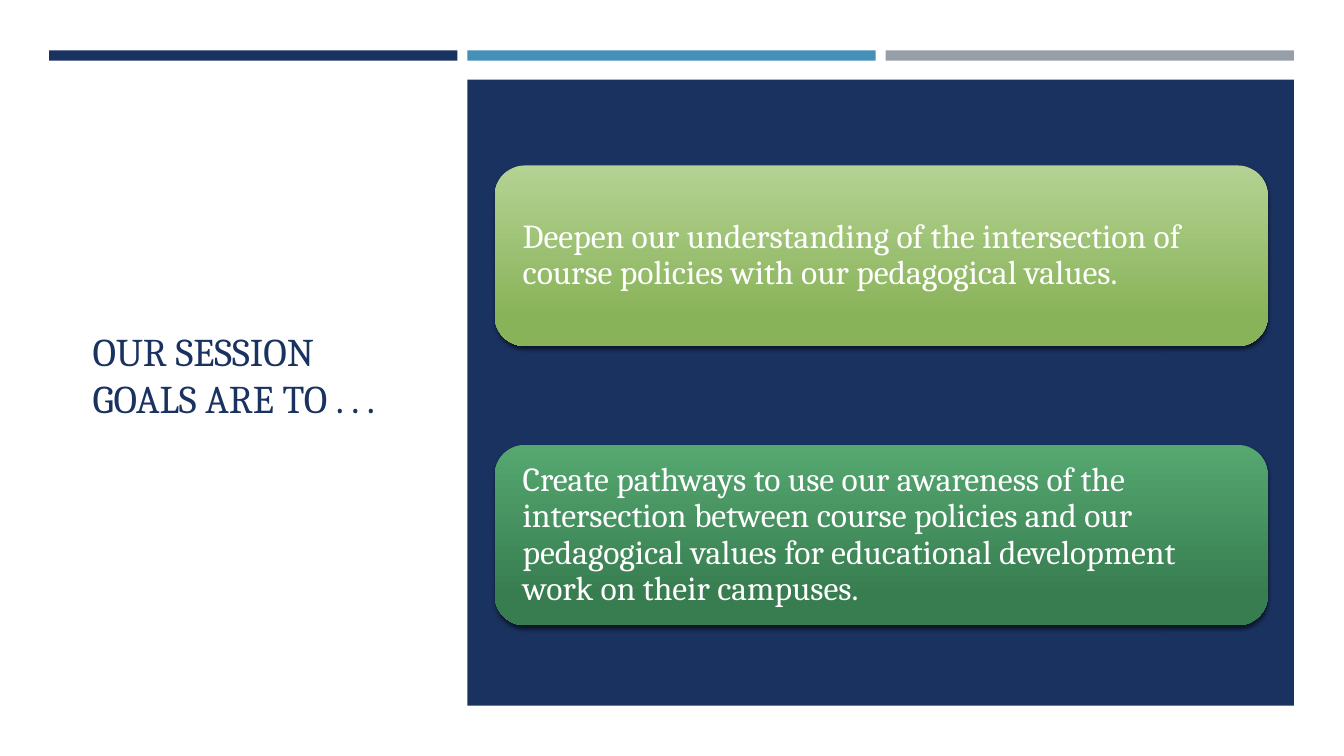
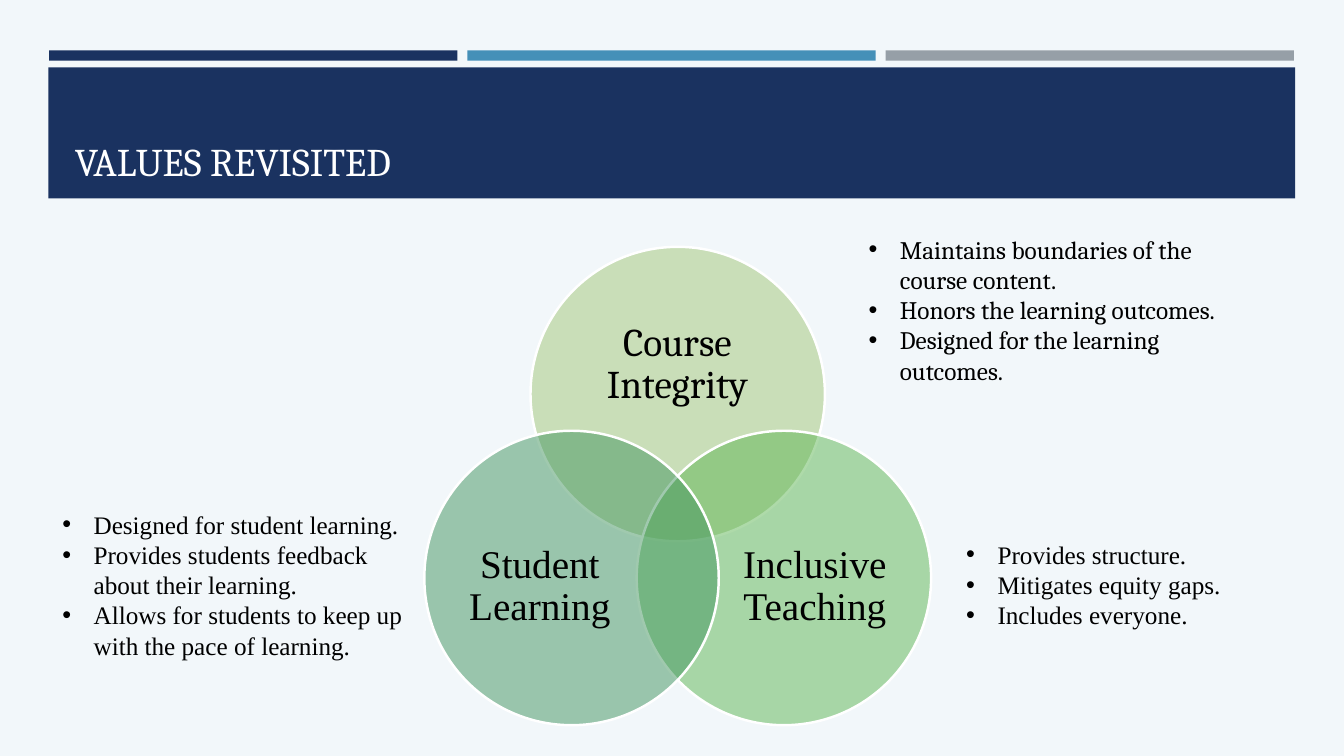
import math

import pptx
import pptx.dml.color
import pptx.enum.shapes
import pptx.enum.text
import pptx.oxml
import pptx.oxml.ns
import pptx.util

Cm = pptx.util.Cm
Pt = pptx.util.Pt
SHAPE = pptx.enum.shapes.MSO_SHAPE
ANCHOR = pptx.enum.text.MSO_ANCHOR
ALIGN = pptx.enum.text.PP_ALIGN
qn = pptx.oxml.ns.qn
NS = pptx.oxml.ns.nsdecls("a")

COLORS = {
    "navy": "1A3260", "blue": "4590B8", "gray": "969FA7",
    "white": "FFFFFF", "black": "000000", "pale": "F2F7FA",
    "lime_light": "B4D293", "lime": "89B359",
    "green_light": "55A770", "green": "377D50",
    "circle_lime": "A2C777", "circle_leaf": "5EB654", "circle_pine": "42955F",
}
SERIF, TIMES = "Cambria", "Times New Roman"

BARS = ["navy", "blue", "gray"]
BAR_LEFT, BAR_TOP, BAR_W, BAR_H, BAR_PITCH = 1.24, 1.27, 10.29, 0.26, 10.54

GOALS_TITLE = "OUR SESSION GOALS ARE TO . . ."
GOALS = [
    ("Deepen our understanding of the intersection of course policies with our "
     "pedagogical values.", "lime_light", "lime"),
    ("Create pathways to use our awareness of the intersection between course "
     "policies and our pedagogical values for educational development work on "
     "their campuses.", "green_light", "green"),
]
GOAL_LEFT, GOAL_TOP, GOAL_W, GOAL_H, GOAL_PITCH = 12.47, 4.17, 19.48, 4.55, 7.04

VALUES_TITLE = "VALUES REVISITED"
VENN_X, VENN_Y, VENN_RADIUS, CIRCLE_D = 17.08, 13.02, 3.09, 7.42
VALUES = [
    {"name": "Course Integrity", "color": "circle_lime", "font": SERIF,
     "label": (14.35, 7.52, 5.44, 3.33), "list": (21.64, 5.77, 10.31, 4.11),
     "points": ["Maintains boundaries of the course content.",
                "Honors the learning outcomes.",
                "Designed for the learning outcomes."]},
    {"name": "Inclusive Teaching", "color": "circle_leaf", "font": TIMES,
     "label": (18.31, 12.75, 4.45, 4.09), "list": (24.1, 13.46, 8.43, 2.57),
     "points": ["Provides structure.", "Mitigates equity gaps.",
                "Includes everyone."]},
    {"name": "Student Learning", "color": "circle_pine", "font": TIMES,
     "label": (11.38, 12.75, 4.45, 4.09), "list": (1.32, 12.7, 9.19, 4.11),
     "points": ["Designed for student learning.",
                "Provides students feedback about their learning.",
                "Allows for students to keep up with the pace of learning."]},
]


def rgb(name):
    return pptx.dml.color.RGBColor.from_string(COLORS[name])


def write(tf, lines, size, font, color, anchor=ANCHOR.TOP, align=ALIGN.LEFT,
          spacing=None):
    tf.word_wrap = True
    tf.vertical_anchor = anchor
    tf.text = "\n".join(lines)
    for p in tf.paragraphs:
        p.alignment = align
        if spacing:
            p.line_spacing = spacing
        for r in p.runs:
            r.font.size = Pt(size)
            r.font.name = font
            r.font.color.rgb = rgb(color)


def set_margins(tf, margin):
    tf.margin_left = tf.margin_right = Cm(margin)
    tf.margin_top = tf.margin_bottom = Cm(margin)


def add_box(s, box):
    return s.shapes.add_textbox(*map(Cm, box))


def add_shape(s, kind, box, color):
    sp = s.shapes.add_shape(kind, *map(Cm, box))
    sp.shadow.inherit = False
    sp.fill.solid()
    sp.fill.fore_color.rgb = rgb(color)
    sp.line.fill.background()
    return sp


def add_slide(prs, background, panel, title, title_box, title_color, anchor):
    s = prs.slides.add_slide(prs.slide_layouts[5])
    s.background.fill.solid()
    s.background.fill.fore_color.rgb = rgb(background)
    for i, color in enumerate(BARS):
        add_shape(s, SHAPE.RECTANGLE,
                  (BAR_LEFT + i * BAR_PITCH, BAR_TOP, BAR_W, BAR_H), color)
    add_shape(s, SHAPE.RECTANGLE, panel, "navy")
    sp = s.shapes.title
    sp.left, sp.top, sp.width, sp.height = map(Cm, title_box)
    write(sp.text_frame, [title], 28, SERIF, title_color, anchor)
    s.shapes._spTree.append(sp._element)
    return s


def add_goal(s, top, text, light, dark):
    sp = add_shape(s, SHAPE.ROUNDED_RECTANGLE,
                   (GOAL_LEFT, top, GOAL_W, GOAL_H), dark)
    sp.fill.gradient()
    sp.fill.gradient_angle = 270
    for stop, color, position in zip(sp.fill.gradient_stops, (light, dark), (0, 0.84)):
        stop.color.rgb = rgb(color)
        stop.position = position
    effects = sp._element.spPr.find(qn("a:effectLst"))
    effects.append(pptx.oxml.parse_xml(
        f'<a:outerShdw {NS} blurRad="38100" dist="25400" dir="5400000" '
        'rotWithShape="0"><a:srgbClr val="000000"><a:alpha val="55000"/>'
        '</a:srgbClr></a:outerShdw>'))
    set_margins(sp.text_frame, 0.48)
    write(sp.text_frame, [text], 24, SERIF, "white", ANCHOR.MIDDLE, spacing=0.9)


def add_value(s, value, angle):
    x = VENN_X + VENN_RADIUS * math.cos(angle) - CIRCLE_D / 2
    y = VENN_Y + VENN_RADIUS * math.sin(angle) - CIRCLE_D / 2
    sp = add_shape(s, SHAPE.OVAL, (x, y, CIRCLE_D, CIRCLE_D), value["color"])
    sp.line.color.rgb = rgb("white")
    sp.line.width = Pt(1.75)
    fill = sp._element.spPr.find(qn("a:solidFill"))
    fill[0].append(pptx.oxml.parse_xml(f'<a:alpha {NS} val="50000"/>'))
    tf = add_box(s, value["label"]).text_frame
    set_margins(tf, 0)
    write(tf, [value["name"]], 28, value["font"], "black", ANCHOR.MIDDLE,
          ALIGN.CENTER, 0.9)


def add_points(s, value):
    tf = add_box(s, value["list"]).text_frame
    write(tf, value["points"], 18, value["font"], "black")
    for p in tf.paragraphs:
        pPr = p._p.get_or_add_pPr()
        pPr.set("marL", str(Cm(0.79)))
        pPr.set("indent", str(-Cm(0.79)))
        pPr.append(pptx.oxml.parse_xml(f'<a:buFont {NS} typeface="Arial"/>'))
        pPr.append(pptx.oxml.parse_xml(f'<a:buChar {NS} char="•"/>'))


def main():
    prs = pptx.Presentation()
    prs.slide_width, prs.slide_height = Cm(33.87), Cm(19.05)

    s = add_slide(prs, "white", (BAR_LEFT + BAR_PITCH, 2.01, 20.83, 15.77),
                  GOALS_TITLE, (2.08, 2.9, 8.48, 13.08), "navy", ANCHOR.MIDDLE)
    for i, goal in enumerate(GOALS):
        add_goal(s, GOAL_TOP + i * GOAL_PITCH, *goal)

    s = add_slide(prs, "pale", (1.22, 1.7, 31.42, 3.3),
                  VALUES_TITLE, (1.63, 1.96, 30.63, 2.82), "white", ANCHOR.BOTTOM)
    for i, value in enumerate(VALUES):
        add_value(s, value, math.radians(120 * i - 90))
    for value in VALUES:
        add_points(s, value)

    prs.save("out.pptx")


if __name__ == "__main__":
    main()
